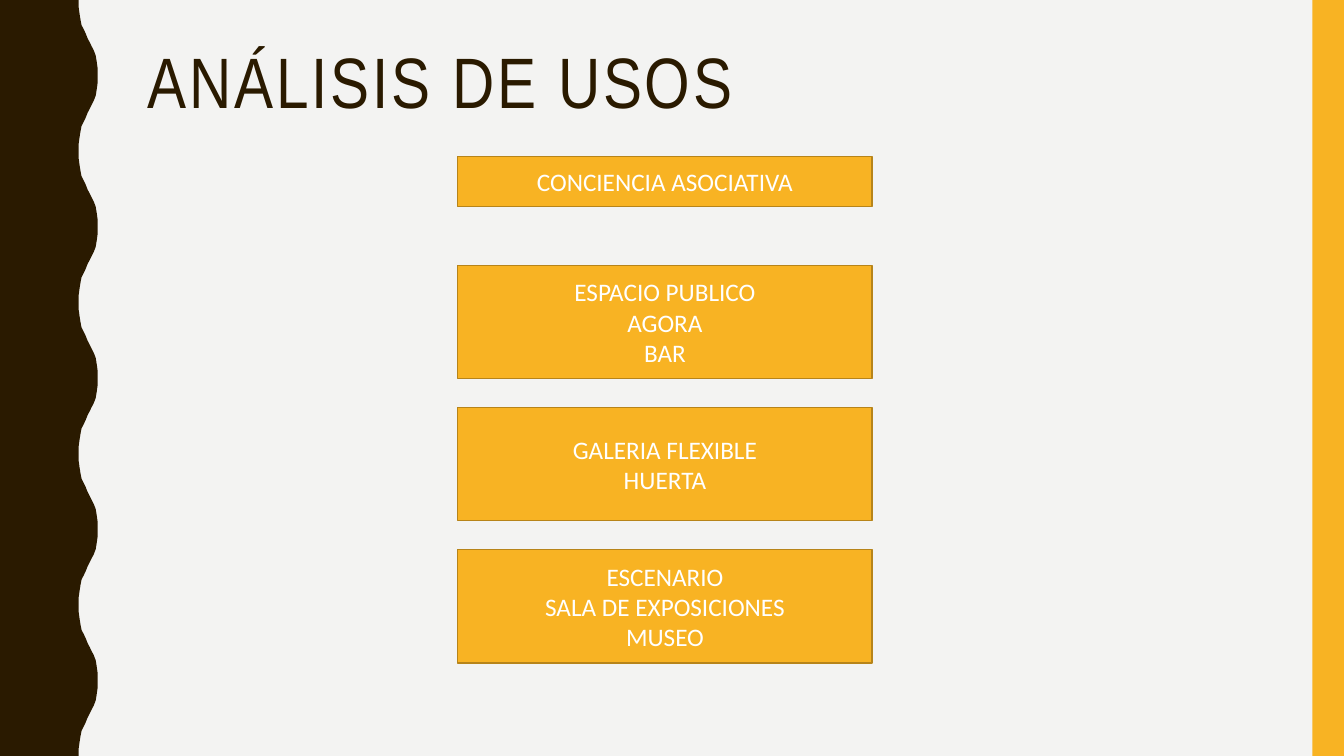
"""Build the slide of uses: a title and four centred boxes beside a wavy edge."""
from dataclasses import dataclass

from pptx import Presentation
from pptx.dml.color import RGBColor
from pptx.enum.shapes import MSO_SHAPE as Preset
from pptx.enum.text import MSO_ANCHOR as Anchor, MSO_AUTO_SIZE as AutoSize, PP_ALIGN as Align
from pptx.shapes.autoshape import Shape
from pptx.slide import Slide
from pptx.text.text import TextFrame
from pptx.util import Pt

COLOURS = {
    "paper": "F3F3F2",
    "brown": "2A1A00",
    "amber": "F8B323",
    "outline": "B7841A",
    "white": "FFFFFF",
}
PAGE_WIDTH, PAGE_HEIGHT = 960, 540
BAND_WIDTH = 22.5
BOX_LEFT, BOX_WIDTH = 327, 296
HALF_WAVE = 54
WAVE_POINTS = [
    (56.2, 0), (56.2, 5), (56.9, 10), (57.6, 14.4), (58.3, 18),
    (59.8, 20.9), (61.2, 23.8), (62.6, 27.4), (64.1, 30.2), (65.5, 33.1),
    (67, 36), (68.4, 39.6), (69.1, 43.9), (69.8, 49), (69.8, 54),
]


@dataclass
class UseBox:
    """A box of uses, one use a line."""

    top: float
    height: float
    uses: list[str]


USE_BOXES = [
    UseBox(112, 35.5, ["CONCIENCIA ASOCIATIVA"]),
    UseBox(189.5, 81, ["ESPACIO PUBLICO", "AGORA", "BAR"]),
    UseBox(291, 81, ["GALERIA FLEXIBLE", "HUERTA"]),
    UseBox(392.5, 81, ["ESCENARIO", "SALA DE EXPOSICIONES", "MUSEO"]),
]


def colour(name: str) -> RGBColor:
    """Return the named colour."""
    return RGBColor.from_string(COLOURS[name])


def paint(shape: Shape, fill: str, outline: str | None = None) -> None:
    """Give a shape a flat fill and, if named, a thin outline."""
    shape.shadow.inherit = False
    shape.fill.solid()
    shape.fill.fore_color.rgb = colour(fill)
    if outline:
        shape.line.color.rgb = colour(outline)
        shape.line.width = Pt(1)
    else:
        shape.line.fill.background()


def format_text(frame: TextFrame, font: str, size: float, ink: str, align: Align) -> None:
    """Format every run of a text frame alike."""
    for para in frame.paragraphs:
        para.alignment = align
        for span in para.runs:
            span.font.name = font
            span.font.size = Pt(size)
            span.font.color.rgb = colour(ink)


def draw_wavy_edge(page: Slide) -> None:
    """Draw the left edge from half waves, every second one mirrored."""
    outline = []
    for index in range(PAGE_HEIGHT // HALF_WAVE):
        start = index * HALF_WAVE
        if index % 2:
            outline += [(x, start + HALF_WAVE - y) for x, y in reversed(WAVE_POINTS)]
        else:
            outline += [(x, start + y) for x, y in WAVE_POINTS]
    outline.append((0, PAGE_HEIGHT))
    builder = page.shapes.build_freeform(0, 0)
    builder.add_line_segments([(Pt(x), Pt(y)) for x, y in outline], close=True)
    paint(builder.convert_to_shape(), "brown")


def draw_band(page: Slide) -> None:
    """Draw the plain band on the right edge."""
    band = page.shapes.add_shape(
        Preset.RECTANGLE, Pt(PAGE_WIDTH - BAND_WIDTH), 0, Pt(BAND_WIDTH), Pt(PAGE_HEIGHT)
    )
    paint(band, "amber")


def write_title(page: Slide, text: str) -> None:
    """Place and format the title."""
    title = page.shapes.title
    title.left, title.top, title.width, title.height = Pt(98.5), Pt(30), Pt(801.5), Pt(117)
    frame = title.text_frame
    frame.text = text
    frame.word_wrap = True
    frame.auto_size = AutoSize.NONE
    frame.vertical_anchor = Anchor.TOP
    format_text(frame, "Arial Narrow", 51, "brown", Align.LEFT)
    para = frame.paragraphs[0]
    para.line_spacing = 0.9
    para.runs[0]._r.get_or_add_rPr().set("spc", "200")


def draw_use_box(page: Slide, item: UseBox) -> None:
    """Draw one box with its uses."""
    box = page.shapes.add_shape(
        Preset.RECTANGLE, Pt(BOX_LEFT), Pt(item.top), Pt(BOX_WIDTH), Pt(item.height)
    )
    paint(box, "amber", "outline")
    frame = box.text_frame
    frame.text = "\n".join(item.uses)
    frame.word_wrap = True
    frame.vertical_anchor = Anchor.MIDDLE
    format_text(frame, "Calibri", 18, "white", Align.CENTER)


def main() -> None:
    """Build and save the deck."""
    deck = Presentation()
    deck.slide_width, deck.slide_height = Pt(PAGE_WIDTH), Pt(PAGE_HEIGHT)
    page = deck.slides.add_slide(deck.slide_layouts.get_by_name("Title Only"))
    page.background.fill.solid()
    page.background.fill.fore_color.rgb = colour("paper")
    draw_wavy_edge(page)
    draw_band(page)
    write_title(page, "ANÁLISIS DE USOS")
    for item in USE_BOXES:
        draw_use_box(page, item)
    deck.save("out.pptx")


if __name__ == "__main__":
    main()
